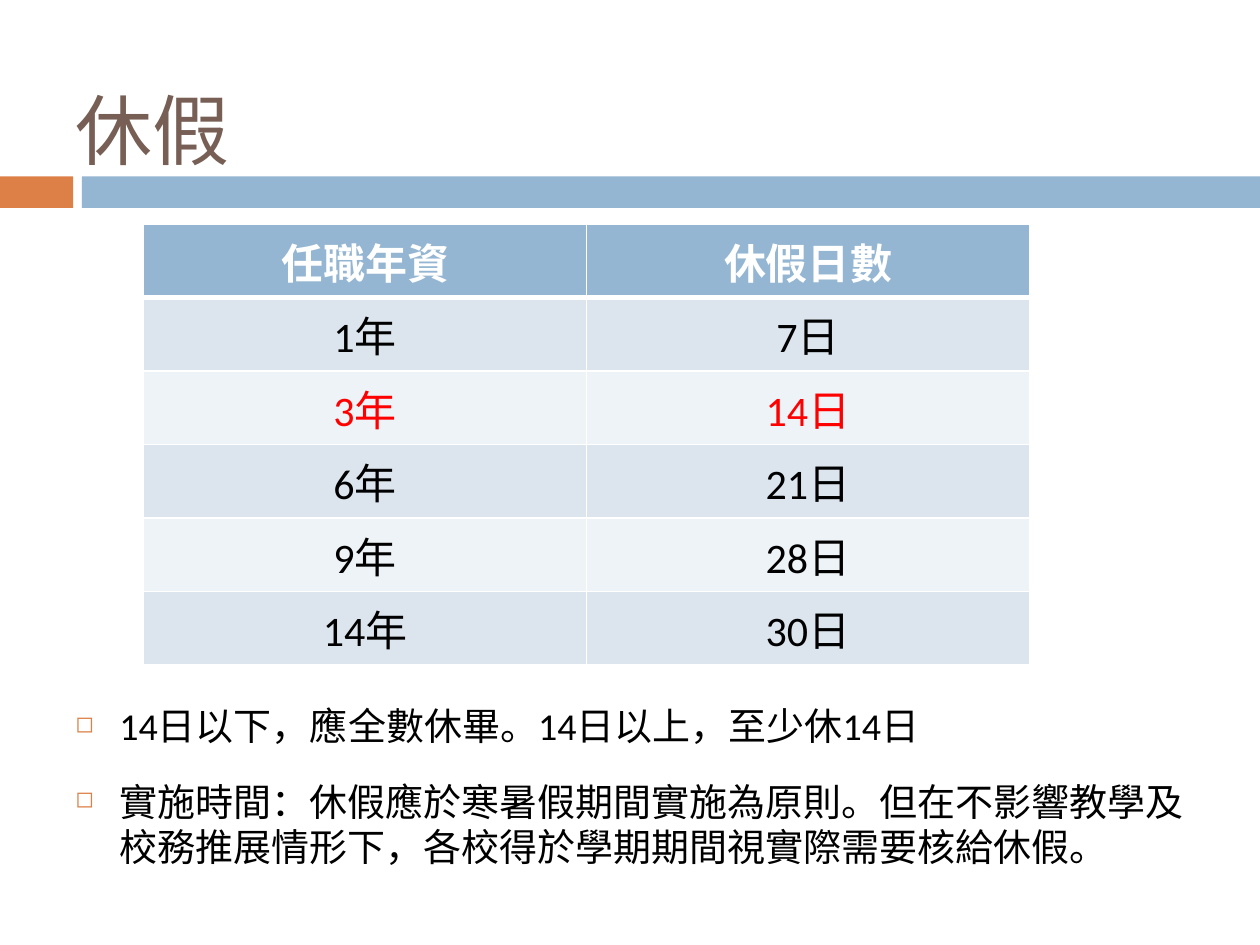
from lxml.etree import SubElement
from pptx import Presentation
from pptx.dml.color import RGBColor
from pptx.enum.shapes import MSO_SHAPE
from pptx.enum.text import MSO_ANCHOR, PP_ALIGN
from pptx.oxml.ns import qn
from pptx.util import Inches, Pt

WHITE = RGBColor(0xFF, 0xFF, 0xFF)
BLACK = RGBColor(0x00, 0x00, 0x00)
RED = RGBColor(0xFF, 0x00, 0x00)
BROWN = RGBColor(0x77, 0x5F, 0x55)
ORANGE = RGBColor(0xDD, 0x80, 0x47)
BLUE = RGBColor(0x94, 0xB6, 0xD2)
BAND_DARK = RGBColor(0xDC, 0xE5, 0xEE)
BAND_LIGHT = RGBColor(0xEE, 0xF3, 0xF7)


def add_text(paragraph, text, size, color, bold=False):
    run = paragraph.add_run()
    run.text = text
    run.font.name = "Calibri"
    run.font.size = Pt(size)
    run.font.bold = bold
    run.font.color.rgb = color


def add_border(cell, side, width):
    line = SubElement(cell._tc.get_or_add_tcPr(), qn(f"a:{side}"), w=str(Pt(width)))
    fill = SubElement(line, qn("a:solidFill"))
    SubElement(fill, qn("a:srgbClr"), val=str(WHITE))


prs = Presentation()
prs.slide_width = Inches(10)
prs.slide_height = Inches(7.5)
slide = prs.slides.add_slide(prs.slide_layouts[6])

for left, width, color in [(0, 0.58, ORANGE), (0.65, 9.35, BLUE)]:
    bar = slide.shapes.add_shape(
        MSO_SHAPE.RECTANGLE, Inches(left), Inches(1.4), Inches(width), Inches(0.25))
    bar.shadow.inherit = False
    bar.fill.solid()
    bar.fill.fore_color.rgb = color
    bar.line.fill.background()

title = slide.shapes.add_textbox(
    Inches(0.5), Inches(0.58), Inches(9), Inches(0.88)).text_frame
title.word_wrap = True
title.vertical_anchor = MSO_ANCHOR.MIDDLE
add_text(title.paragraphs[0], "休假", 44, BROWN)

leave_days = [
    ("任職年資", "休假日數"),
    ("1年", "7日"),
    ("3年", "14日"),
    ("6年", "21日"),
    ("9年", "28日"),
    ("14年", "30日"),
]
table = slide.shapes.add_table(
    len(leave_days), 2, Inches(1.14), Inches(1.78), Inches(7.03), Inches(3.5)).table
for row_index, entries in enumerate(leave_days):
    header = row_index == 0
    text_color = WHITE if header else RED if row_index == 2 else BLACK
    band = BLUE if header else BAND_DARK if row_index % 2 else BAND_LIGHT
    for column_index, entry in enumerate(entries):
        cell = table.cell(row_index, column_index)
        for side in ("lnL", "lnR", "lnT", "lnB"):
            thick = (row_index, side) in [(0, "lnB"), (1, "lnT")]
            add_border(cell, side, 3 if thick else 1)
        cell.fill.solid()
        cell.fill.fore_color.rgb = band
        paragraph = cell.text_frame.paragraphs[0]
        paragraph.alignment = PP_ALIGN.CENTER
        add_text(paragraph, entry, 24, text_color, header)

rules = [
    "14日以下，應全數休畢。14日以上，至少休14日",
    "實施時間：休假應於寒暑假期間實施為原則。但在不影響教學及校務推展情形下，各校得於學期期間視實際需要核給休假。",
]
notes = slide.shapes.add_textbox(
    Inches(0.5), Inches(5.53), Inches(9), Inches(1.56)).text_frame
notes.word_wrap = True
for index, rule in enumerate(rules):
    paragraph = notes.add_paragraph() if index else notes.paragraphs[0]
    paragraph.space_before = Pt(17 * index)
    properties = paragraph._p.get_or_add_pPr()
    properties.set("marL", str(Inches(0.35)))
    properties.set("indent", str(-Inches(0.35)))
    bullet_color = SubElement(properties, qn("a:buClr"))
    SubElement(bullet_color, qn("a:srgbClr"), val=str(ORANGE))
    SubElement(properties, qn("a:buSzPct"), val="60000")
    SubElement(properties, qn("a:buChar"), char="◻")
    add_text(paragraph, rule, 21.7, BLACK)

prs.save("out.pptx")
